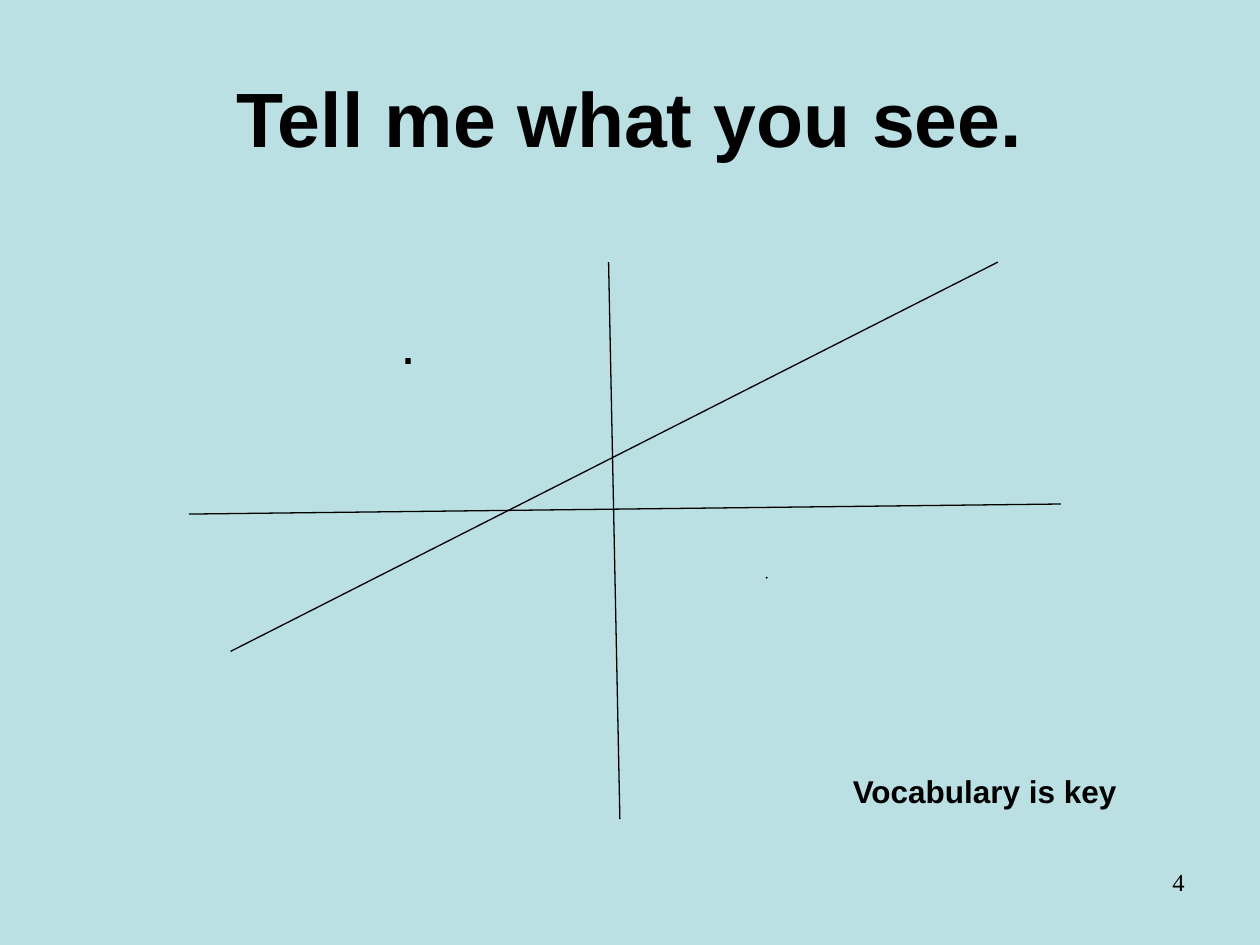
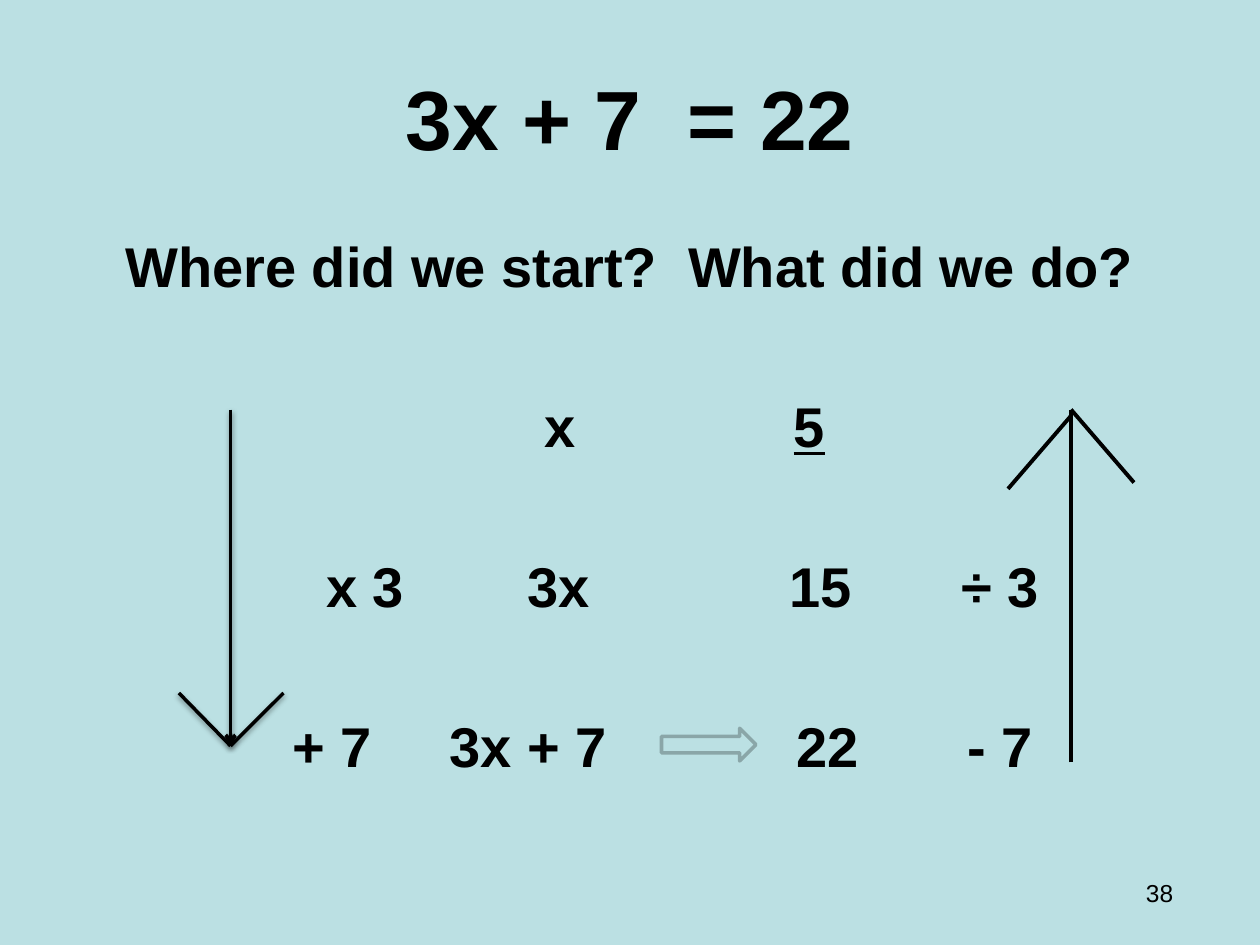
from lxml import etree
from pptx import Presentation
from pptx.dml.color import RGBColor
from pptx.enum import shapes, text
from pptx.oxml import ns
from pptx.util import Inches, Pt

BACKGROUND, INK, ARROW_EDGE = "BBE0E3", "000000", "8AA6A8"
SANS, SERIF = "Arial", "Times New Roman"
LEFT, CENTER, RIGHT = text.PP_ALIGN.LEFT, text.PP_ALIGN.CENTER, text.PP_ALIGN.RIGHT
TITLE_AREA = (0.5, 0.3, 9, 1.25)

# Vocabulary slide: lines as (start, end)
SEE_TITLE = "Tell me what you see."
CROSSING_LINES = [
    ((4.83, 2.08), (4.92, 6.5)),
    ((1.5, 4.08), (8.42, 4)),
    ((1.83, 5.17), (7.92, 2.08)),
    ((6.08, 4.59), (6.09, 4.58)),
]

# Equation slide: each row is a list of (tab position, text)
EQUATION = "3x + 7  = 22"
QUESTIONS = "Where did we start?  What did we do?"
ANSWER = "5"
STEPS = [
    [(3.72, "x"), (5.7, ANSWER)],
    [(1.99, "x 3"), (3.59, "3x"), (5.67, "15"), (7.03, "÷ 3")],
    [(1.72, "+ 7"), (2.97, "3x + 7"), (5.72, "22"), (7.08, "- 7")],
]
STEP_GAP = 53
DOWN_TIP = (1.83, 5.92)
DOWN_BARBS = [(2.25, 5.5), (1.42, 5.5)]
UP_ARROW = [
    ((8.5, 6.05), (8.5, 3.25)),
    ((8.5, 3.25), (9, 3.83)),
    ((8.5, 3.3), (8, 3.88)),
]


def color(value):
    return RGBColor.from_string(value)


def add_xml(parent, tag, **attributes):
    return etree.SubElement(parent, ns.qn("a:" + tag), attributes)


def style(span, size, bold, font=SANS):
    span.font.size, span.font.bold, span.font.name = Pt(size), bold, font
    span.font.color.rgb = color(INK)


def add_text(page, area, words, size, bold=False, align=LEFT, font=SANS,
             anchor=text.MSO_ANCHOR.TOP):
    box = page.shapes.add_textbox(*map(Inches, area))
    frame = box.text_frame
    frame.word_wrap, frame.vertical_anchor = True, anchor
    frame.text = words
    para = frame.paragraphs[0]
    para.alignment = align
    style(para.runs[0], size, bold, font)
    return frame


def add_page(deck, title, title_size):
    page = deck.slides.add_slide(deck.slide_layouts[6])
    page.background.fill.solid()
    page.background.fill.fore_color.rgb = color(BACKGROUND)
    add_text(page, TITLE_AREA, title, title_size, True, CENTER,
             anchor=text.MSO_ANCHOR.MIDDLE)
    return page


def add_line(page, start, end, width, shadow=False, arrow=False):
    line = page.shapes.add_connector(
        shapes.MSO_CONNECTOR.STRAIGHT, *map(Inches, start + end))
    line.line.color.rgb = color(INK)
    line.line.width = Pt(width)
    if arrow:
        add_xml(line.line._get_or_add_ln(), "tailEnd", type="arrow")
    effects = add_xml(line._element.spPr, "effectLst")
    if shadow:
        outer = add_xml(effects, "outerShdw", blurRad=str(Pt(3.1)),
                        dist=str(Pt(1.6)), dir="5400000", rotWithShape="0")
        add_xml(add_xml(outer, "srgbClr", val=INK), "alpha", val="38000")


def add_step(frame, cells):
    para = frame.add_paragraph()
    para.space_before = Pt(STEP_GAP)
    stops = add_xml(para._p.get_or_add_pPr(), "tabLst")
    for position, words in cells:
        add_xml(stops, "tab", pos=str(Inches(position)), algn="l")
        for part in ("\t", words):
            span = para.add_run()
            span.text = part
            style(span, 32, True)
            span.font.underline = part == ANSWER


def build_vocabulary(deck):
    page = add_page(deck, SEE_TITLE, 44)
    add_text(page, (3.08, 2.4, 0.5, 0.6), ".", 32)
    add_text(page, (7.17, 6.83, 2.33, 0.52), "4", 14, align=RIGHT, font=SERIF)
    for start, end in CROSSING_LINES:
        add_line(page, start, end, 0.75)
    add_text(page, (6.67, 6.08, 2.83, 0.4), "Vocabulary is key", 18, True)


def build_equation(deck):
    page = add_page(deck, EQUATION, 48)
    frame = add_text(page, (0.5, 1.79, 9, 4.91), QUESTIONS, 32, True, CENTER)
    for cells in STEPS:
        add_step(frame, cells)
    add_text(page, (7.08, 6.92, 2.33, 0.4), "38", 14, align=RIGHT)

    # Downward arrow: doing
    add_line(page, (DOWN_TIP[0], 3.25), DOWN_TIP, 2, shadow=True, arrow=True)
    for barb in DOWN_BARBS:
        add_line(page, DOWN_TIP, barb, 2, shadow=True)

    # Arrow across to the result
    across = page.shapes.add_shape(
        shapes.MSO_SHAPE.RIGHT_ARROW, *map(Inches, (5.25, 5.78, 0.75, 0.26)))
    across.shadow.inherit = False
    across.fill.solid()
    across.fill.fore_color.rgb = color(BACKGROUND)
    across.line.color.rgb = color(ARROW_EDGE)
    across.line.width = Pt(2)

    # Upward arrow: undoing
    for start, end in UP_ARROW:
        add_line(page, start, end, 2.25)


def main():
    deck = Presentation()
    deck.slide_width, deck.slide_height = Inches(10), Inches(7.5)
    build_vocabulary(deck)
    build_equation(deck)
    deck.save("out.pptx")


if __name__ == "__main__":
    main()
